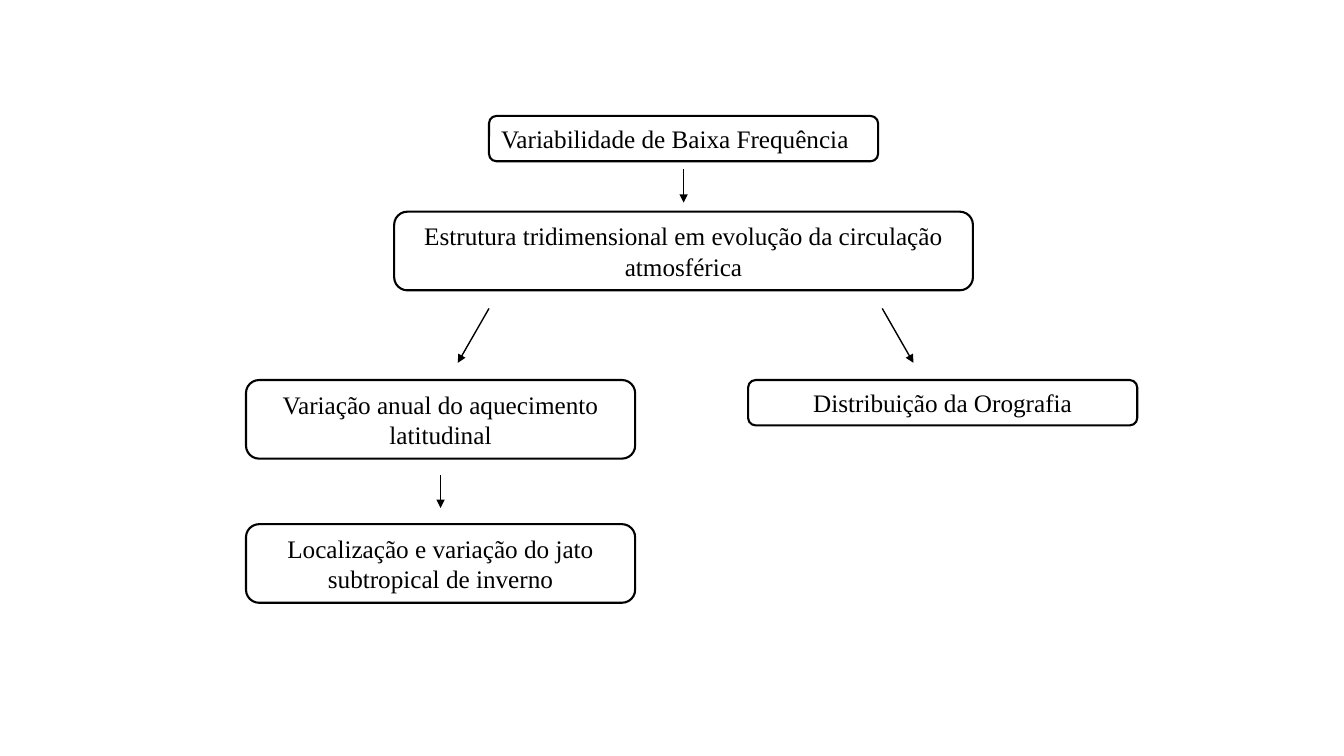
from lxml.etree import SubElement
from pptx import Presentation
from pptx.dml.color import RGBColor
from pptx.enum.shapes import MSO_CONNECTOR, MSO_SHAPE
from pptx.enum.text import MSO_ANCHOR, MSO_AUTO_SIZE, PP_ALIGN
from pptx.oxml.ns import qn
from pptx.util import Inches, Pt

COLOURS = {"ink": "000000", "paper": "FFFFFF"}


def colour(name):
    return RGBColor.from_string(COLOURS[name])


class FlowSlide:
    font_format = {"name": "Times New Roman", "size": Pt(18)}
    frame_format = {
        "word_wrap": True,
        "auto_size": MSO_AUTO_SIZE.SHAPE_TO_FIT_TEXT,
        "vertical_anchor": MSO_ANCHOR.MIDDLE,
    }

    def __init__(self, slide):
        self.slide = slide

    def apply(self, target, values):
        for key, value in values.items():
            setattr(target, key, value)

    def outline(self, line, width):
        line.color.rgb = colour("ink")
        line.width = Pt(width)

    def step(self, text, left, top, width, height, align=PP_ALIGN.CENTER):
        box = self.slide.shapes.add_shape(
            MSO_SHAPE.ROUNDED_RECTANGLE,
            Inches(left), Inches(top), Inches(width), Inches(height))
        box.shadow.inherit = False
        box.fill.solid()
        box.fill.fore_color.rgb = colour("paper")
        self.outline(box.line, 1.5)
        self.apply(box.text_frame, self.frame_format)
        paragraph = box.text_frame.paragraphs[0]
        paragraph.alignment = align
        run = paragraph.add_run()
        run.text = text
        self.apply(run.font, self.font_format)
        run.font.color.rgb = colour("ink")

    def arrow(self, x, y, dx, dy):
        link = self.slide.shapes.add_connector(
            MSO_CONNECTOR.STRAIGHT,
            Inches(x), Inches(y), Inches(x + dx), Inches(y + dy))
        self.outline(link.line, 1)
        SubElement(link.line._ln, qn("a:tailEnd"), type="triangle")
        SubElement(link._element.spPr, qn("a:effectLst"))


def main():
    deck = Presentation()
    deck.slide_width, deck.slide_height = Inches(13.33), Inches(7.5)
    flow = FlowSlide(deck.slides.add_slide(deck.slide_layouts[6]))

    narrow, wide = 3.86, 5.74
    one_line, two_lines = 0.45, 0.78
    left_branch, right_branch, branch_top = 2.44, 7.42, 3.77

    # Main theme and the circulation it depends on
    flow.step("Variabilidade de Baixa Frequência",
              4.85, 1.15, narrow, one_line, PP_ALIGN.LEFT)
    flow.step("Estrutura tridimensional em evolução da circulação atmosférica",
              3.91, 2.1, wide, two_lines)

    # Left branch: heating and the jet
    flow.step("Variação anual do aquecimento latitudinal",
              left_branch, branch_top, narrow, two_lines)
    flow.step("Localização e variação do jato subtropical de inverno",
              left_branch, 5.2, narrow, two_lines)

    # Right branch: orography
    flow.step("Distribuição da Orografia",
              right_branch, branch_top, narrow, one_line)

    # Downward arrows, then the two that fork
    for x, y in [(6.78, 1.68), (4.37, 4.71)]:
        flow.arrow(x, y, 0, 0.33)
    for x, dx in [(4.85, -0.31), (8.75, 0.31)]:
        flow.arrow(x, 3.06, dx, 0.54)

    deck.save("out.pptx")


if __name__ == "__main__":
    main()
